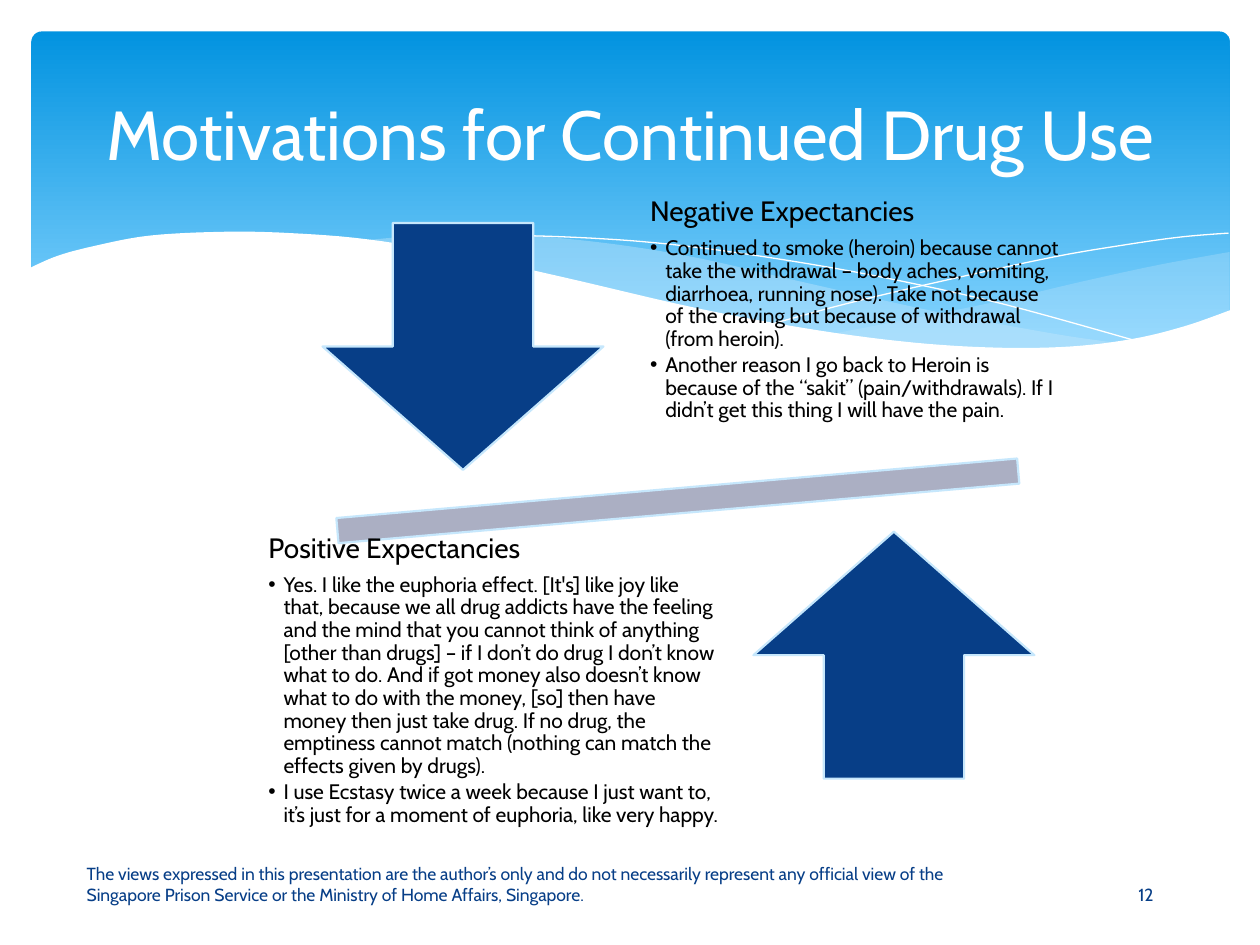
from dataclasses import dataclass

import pptx
import pptx.dml.color
import pptx.enum.dml
import pptx.enum.shapes
import pptx.enum.text
import pptx.oxml
import pptx.oxml.ns
import pptx.util
from pptx.util import Inches

FONT = "Cabin"
WHITE, BLACK, NAVY, PALE, GREY = "FFFFFF", "000000", "073E87", "C6E7FC", "ABAFC3"
SHAPE = pptx.enum.shapes.MSO_SHAPE
ALIGN = pptx.enum.text.PP_ALIGN
Points = list[tuple[float, float]]


@dataclass
class Wave:
    """Smooth edges in inches, joined end to end; an unfilled wave is a hairline."""
    edges: list[Points]
    fill: str | None = None
    opacity: int = 100


@dataclass
class Block:
    kind: int
    box: tuple[float, float, float, float]
    fill: str
    rotation: float = 0


@dataclass
class Expectancy:
    heading: str
    quotes: list[str]
    box: tuple[float, float, float, float]
    bottom_inset: float


WAVES = [
    Wave([[(9.76, 2), (9.21, 2.1), (8.61, 2.23), (7.79, 2.42), (6.61, 2.65)],
          [(6.61, 2.65), (7.05, 2.71), (7.57, 2.76), (8.14, 2.78), (8.72, 2.74),
           (9.21, 2.65), (9.76, 2.47)]], PALE, 29),
    Wave([[(8.93, 2.73), (8.37, 2.65), (7.41, 2.47), (6.29, 2.22), (5.55, 2.05),
           (4.89, 1.94), (4.2, 1.87), (3.61, 1.85), (2.86, 1.91)],
          [(2.86, 1.91), (3.62, 2.03), (4.49, 2.22), (5.3, 2.4), (6.18, 2.58),
           (6.95, 2.7), (7.61, 2.77), (8.28, 2.78), (8.93, 2.73)]], PALE, 40),
    Wave([[(3.09, 1.95), (3.44, 1.9), (4.01, 1.87), (4.69, 1.89), (5.33, 1.94),
           (6.08, 2.04), (6.95, 2.19), (7.95, 2.41), (9.07, 2.72)]]),
    Wave([[(6.13, 2.57), (6.72, 2.41), (7.48, 2.23), (8.36, 2.04), (8.95, 1.94),
           (9.38, 1.88), (9.75, 1.85)]]),
    Wave([[(9.77, 2.46), (9.4, 2.59), (8.99, 2.69), (8.5, 2.75), (7.93, 2.76),
           (7.26, 2.72), (6.48, 2.62), (5.55, 2.45), (4.47, 2.2), (3.65, 2.02),
           (2.92, 1.9), (2.3, 1.85), (1.77, 1.84), (1.19, 1.87), (0.76, 1.95),
           (0.46, 2.03), (0.23, 2.13)],
          [(0.23, 3.29), (9.77, 3.29)]], WHITE),
]

SEESAW = Block(SHAPE.MATH_MINUS, (1.69, 3.55, 7.38, 0.85), GREY, rotation=355)
DOWN = Block(SHAPE.DOWN_ARROW, (2.56, 1.77, 2.23, 1.96), NAVY)
UP = Block(SHAPE.UP_ARROW, (5.98, 4.22, 2.23, 1.96), NAVY)

NEGATIVE = Expectancy("Negative Expectancies", [
    "Continued to smoke (heroin) because cannot take the withdrawal – body aches, "
    "vomiting, diarrhoea, running nose). Take not because of the craving but because "
    "of withdrawal (from heroin).",
    "Another reason I go back to Heroin is because of the “sakit” (pain/withdrawals). "
    "If I didn’t get this thing I will have the pain.",
], (5.04, 1.53, 3.49, 2.06), bottom_inset=0.32)
POSITIVE = Expectancy("Positive Expectancies", [
    "Yes. I like the euphoria effect. [It's] like joy like that, because we all drug "
    "addicts have the feeling and the mind that you cannot think of anything [other "
    "than drugs] – if I don’t do drug I don’t know what to do. And if got money also "
    "doesn’t know what to do with the money, [so] then have money then just take drug. "
    "If no drug, the emptiness cannot match (nothing can match the effects given by "
    "drugs).",
    "I use Ecstasy twice a week because I just want to, it’s just for a moment of "
    "euphoria, like very happy.",
], (2.01, 4.37, 3.85, 2.06), bottom_inset=0.12)

DISCLAIMER = ("The views expressed in this presentation are the author’s only and do not "
              "necessarily represent any official view of the Singapore Prison Service or "
              "the Ministry of Home Affairs, Singapore.")


def rgb(color: str) -> pptx.dml.color.RGBColor:
    return pptx.dml.color.RGBColor.from_string(color)


def smooth(points: Points, steps: int = 6) -> Points:
    """Catmull-Rom curve through the points."""
    padded = [points[0], *points, points[-1]]
    curve = [points[0]]
    for a, b, c, d in zip(padded, padded[1:], padded[2:], padded[3:]):
        for t in (step / steps for step in range(1, steps + 1)):
            curve.append(tuple(
                b[i] + 0.5 * t * (c[i] - a[i]
                + t * (2 * a[i] - 5 * b[i] + 4 * c[i] - d[i]
                + t * (3 * (b[i] - c[i]) + d[i] - a[i]))) for i in (0, 1)))
    return curve


def draw_wave(shapes, wave: Wave) -> None:
    outline = [(Inches(x), Inches(y)) for edge in wave.edges for x, y in smooth(edge)]
    builder = shapes.build_freeform(*outline[0])
    builder.add_line_segments(outline[1:], close=wave.fill is not None)
    shape = builder.convert_to_shape()
    shape.shadow.inherit = False
    if wave.fill is None:
        shape.fill.background()
        shape.line.color.rgb = rgb(WHITE)
        shape.line.width = 0
        return
    shape.line.fill.background()
    shape.fill.solid()
    shape.fill.fore_color.rgb = rgb(wave.fill)
    if wave.opacity < 100:
        color = shape.fill._xPr.find(".//" + pptx.oxml.ns.qn("a:srgbClr"))
        alpha = color.makeelement(pptx.oxml.ns.qn("a:alpha"), {"val": str(wave.opacity * 1000)})
        color.append(alpha)


def draw_block(shapes, block: Block) -> None:
    shape = shapes.add_shape(block.kind, *map(Inches, block.box))
    shape.shadow.inherit = False
    shape.rotation = block.rotation
    shape.fill.solid()
    shape.fill.fore_color.rgb = rgb(block.fill)
    shape.line.color.rgb = rgb(PALE)
    shape.line.width = pptx.util.Pt(1.25)


def draw_sky(shapes) -> None:
    sky = shapes.add_shape(SHAPE.ROUNDED_RECTANGLE, *map(Inches, (0.25, 0.25, 9.51, 2.7)))
    sky.adjustments[0] = 0.03
    sky.shadow.inherit = False
    sky.line.fill.background()
    sky.fill.gradient()
    sky.fill.gradient_angle = 270
    for stop, position, color in zip(sky.fill.gradient_stops, (0, 0.9), ("0293E0", "83D3FE")):
        stop.position = position
        stop.color.rgb = rgb(color)


def write(paragraph, text: str, *, size: float, color: str, align=ALIGN.LEFT,
          line_spacing: float = 1, after: float = 0, bullet: bool = False) -> None:
    run = paragraph.add_run()
    run.text = text
    run.font.name = FONT
    run.font.size = pptx.util.Pt(size)
    run.font.color.rgb = rgb(color)
    paragraph.alignment = align
    paragraph.line_spacing = line_spacing
    paragraph.space_before = pptx.util.Pt(0)
    paragraph.space_after = pptx.util.Pt(after)
    properties = paragraph._p.get_or_add_pPr()
    hang = Inches(0.12) if bullet else 0
    properties.set("marL", str(hang))
    properties.set("indent", str(-hang))
    marker = "<a:buChar %s char='•'/>" if bullet else "<a:buNone %s/>"
    properties.append(pptx.oxml.parse_xml(marker % pptx.oxml.ns.nsdecls("a")))


def place(shape, box: tuple[float, float, float, float]):
    """Moves the shape to the box and returns its middle-anchored, wrapping text frame."""
    shape.left, shape.top, shape.width, shape.height = map(Inches, box)
    frame = shape.text_frame
    frame.word_wrap = True
    frame.auto_size = pptx.enum.text.MSO_AUTO_SIZE.NONE
    frame.vertical_anchor = pptx.enum.text.MSO_ANCHOR.MIDDLE
    return frame


def bring_to_front(shape) -> None:
    shape.element.getparent().append(shape.element)


def fill_expectancy(body, expectancy: Expectancy) -> None:
    frame = place(body, expectancy.box)
    frame.margin_left = frame.margin_top = frame.margin_right = Inches(0.12)
    frame.margin_bottom = Inches(expectancy.bottom_inset)
    write(frame.paragraphs[0], expectancy.heading, size=16, color=BLACK,
          line_spacing=0.9, after=5.6)
    for quote in expectancy.quotes:
        paragraph = frame.add_paragraph()
        paragraph.level = 1
        write(paragraph, quote, size=12, color=BLACK, line_spacing=0.9, after=1.8, bullet=True)
    bring_to_front(body)


def main() -> None:
    deck = pptx.Presentation()
    deck.slide_width, deck.slide_height = Inches(10), Inches(7.5)
    slide = deck.slides.add_slide(deck.slide_layouts.get_by_name("Two Content"))
    shapes = slide.shapes
    title, negative, positive = slide.placeholders

    draw_sky(shapes)
    for wave in WAVES:
        draw_wave(shapes, wave)
    heading = place(title, (0.5, 0.37, 9, 1.37)).paragraphs[0]
    write(heading, "Motivations for Continued Drug Use", size=39.6, color=WHITE,
          align=ALIGN.CENTER)
    bring_to_front(title)

    draw_block(shapes, SEESAW)
    draw_block(shapes, DOWN)
    fill_expectancy(negative, NEGATIVE)
    draw_block(shapes, UP)
    fill_expectancy(positive, POSITIVE)

    footer = place(shapes.add_textbox(0, 0, 0, 0), (0.59, 6.9, 7.56, 0.4))
    footer.margin_bottom = Inches(0.22)
    write(footer.paragraphs[0], DISCLAIMER, size=10, color=NAVY)
    number = place(shapes.add_textbox(0, 0, 0, 0), (8.46, 6.9, 1.27, 0.4))
    write(number.paragraphs[0], "12", size=10, color=NAVY, align=ALIGN.CENTER)

    deck.save("out.pptx")


if __name__ == "__main__":
    main()
